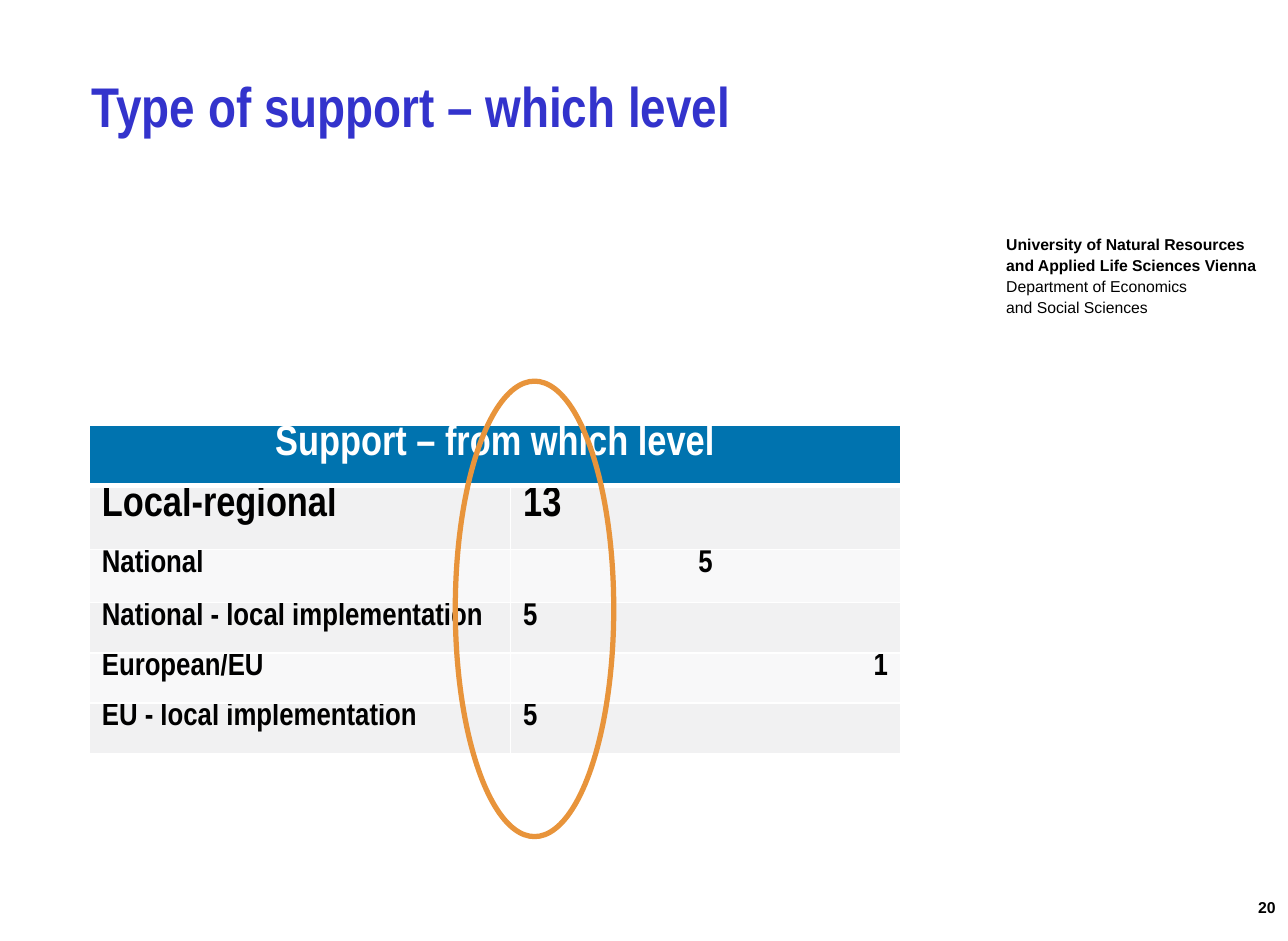
from dataclasses import dataclass

from lxml.etree import SubElement
from pptx import Presentation
from pptx.dml.color import RGBColor
from pptx.enum.shapes import MSO_SHAPE
from pptx.enum.text import MSO_ANCHOR, MSO_AUTO_SIZE, PP_ALIGN
from pptx.oxml.ns import qn
from pptx.util import Inches, Pt


@dataclass(frozen=True)
class Theme:
    """Hold the colours, fonts and type sizes of the slide."""
    heading_font: str = "Arial Narrow"
    small_font: str = "Arial"
    title_color: str = "3333CC"
    text_color: str = "000000"
    white: str = "FFFFFF"
    header_fill: str = "0073AF"
    bands: tuple = ("F1F1F2", "F8F8F9")
    accent: str = "E8943B"
    title_size: int = 32
    large_size: int = 24
    body_size: int = 18
    small_size: int = 9


THEME = Theme()
HEADER = "Support – from which level"
SUPPORT_LEVELS = [
    ("Local-regional", "13", PP_ALIGN.LEFT, THEME.large_size),
    ("National", "5", PP_ALIGN.CENTER, THEME.body_size),
    ("National - local implementation", "5", PP_ALIGN.LEFT, THEME.body_size),
    ("European/EU", "1", PP_ALIGN.RIGHT, THEME.body_size),
    ("EU - local implementation", "5", PP_ALIGN.LEFT, THEME.body_size),
]
COLUMN_WIDTHS = (3.35, 3.1)
ROW_HEIGHTS = (0.48, 0.51, 0.42, 0.4, 0.4, 0.4)


def inches(box):
    """Convert a box of left, top, width and height to lengths."""
    return [Inches(value) for value in box]


def format_paragraph(paragraph, font, size, color, bold=True, align=PP_ALIGN.LEFT):
    """Apply alignment and type to every run of a paragraph."""
    paragraph.alignment = align
    for run in paragraph.runs:
        run.font.name = font
        run.font.size = Pt(size)
        run.font.bold = bold
        run.font.color.rgb = RGBColor.from_string(color)


def set_borders(cell, bottom_width):
    """Draw white borders round a cell, the bottom one in its own width."""
    properties = cell._tc.get_or_add_tcPr()
    widths = {"a:lnL": 1, "a:lnR": 1, "a:lnT": 1, "a:lnB": bottom_width}
    for position, (side, width) in enumerate(widths.items()):
        line = SubElement(properties, qn(side), w=str(Pt(width)))
        fill = SubElement(line, qn("a:solidFill"))
        SubElement(fill, qn("a:srgbClr"), val=THEME.white)
        properties.insert(position, line)


def fill_cell(cell, text, fill, size, color, align, bottom_width=1):
    """Write one table cell with its fill, type and borders."""
    cell.text_frame.text = text
    cell.margin_top = cell.margin_bottom = 0
    cell.margin_left = cell.margin_right = Inches(0.1)
    cell.fill.solid()
    cell.fill.fore_color.rgb = RGBColor.from_string(fill)
    format_paragraph(cell.text_frame.paragraphs[0], THEME.heading_font, size, color, align=align)
    set_borders(cell, bottom_width)


def add_title(slide, box):
    """Place the slide title in its placeholder."""
    title = slide.shapes.title
    title.left, title.top, title.width, title.height = inches(box)
    frame = title.text_frame
    frame.text = "Type of support – which level"
    frame.auto_size = MSO_AUTO_SIZE.NONE
    frame.vertical_anchor = MSO_ANCHOR.TOP
    format_paragraph(frame.paragraphs[0], THEME.heading_font, THEME.title_size, THEME.title_color)


def add_affiliation(slide, box):
    """Place the university and department names."""
    frame = slide.shapes.add_textbox(*inches(box)).text_frame
    frame.word_wrap = True
    frame.margin_left = frame.margin_right = Inches(0.12)
    frame.margin_top = frame.margin_bottom = Inches(0.06)
    frame.text = (
        "University of Natural Resources\vand Applied Life Sciences Vienna\n"
        "Department of Economics\vand Social Sciences"
    )
    for paragraph, bold in zip(frame.paragraphs, (True, False)):
        paragraph.line_spacing = Pt(12)
        format_paragraph(paragraph, THEME.small_font, THEME.small_size, THEME.text_color, bold)


def add_page_number(slide, box):
    """Place the page number at the right edge."""
    frame = slide.shapes.add_textbox(*inches(box)).text_frame
    frame.word_wrap = True
    frame.text = "20"
    format_paragraph(frame.paragraphs[0], THEME.small_font, THEME.small_size,
                     THEME.text_color, align=PP_ALIGN.RIGHT)


def add_support_table(slide, left, top):
    """Place the table of support levels at a corner."""
    box = (left, top, sum(COLUMN_WIDTHS), sum(ROW_HEIGHTS))
    table = slide.shapes.add_table(len(ROW_HEIGHTS), len(COLUMN_WIDTHS), *inches(box)).table
    table.horz_banding = False
    for column, width in zip(table.columns, COLUMN_WIDTHS):
        column.width = Inches(width)
    for row, height in zip(table.rows, ROW_HEIGHTS):
        row.height = Inches(height)
    table.cell(0, 0).merge(table.cell(0, 1))
    for column, text in enumerate((HEADER, "")):
        fill_cell(table.cell(0, column), text, THEME.header_fill, THEME.large_size,
                  THEME.white, PP_ALIGN.CENTER, bottom_width=3)
    for row, (level, count, align, size) in enumerate(SUPPORT_LEVELS, start=1):
        band = THEME.bands[(row - 1) % 2]
        fill_cell(table.cell(row, 0), level, band, size, THEME.text_color, PP_ALIGN.LEFT)
        fill_cell(table.cell(row, 1), count, band, size, THEME.text_color, align)


def add_highlight(slide, box):
    """Ring the local counts with an ellipse."""
    ring = slide.shapes.add_shape(MSO_SHAPE.OVAL, *inches(box))
    ring.shadow.inherit = False
    ring.fill.background()
    ring.line.color.rgb = RGBColor.from_string(THEME.accent)
    ring.line.width = Pt(3)


def main():
    """Build the slide and save it."""
    presentation = Presentation()
    presentation.slide_width = Inches(10.24)
    presentation.slide_height = Inches(7.48)
    slide = presentation.slides.add_slide(presentation.slide_layouts[5])
    add_affiliation(slide, (7.88, 1.79, 2.36, 0.78))
    add_page_number(slide, (9.25, 7.09, 0.99, 0.39))
    add_title(slide, (0.63, 0.52, 7.24, 0.64))
    add_support_table(slide, 0.71, 3.38)
    add_highlight(slide, (3.62, 3.03, 1.26, 3.62))
    presentation.save("out.pptx")


if __name__ == "__main__":
    main()
